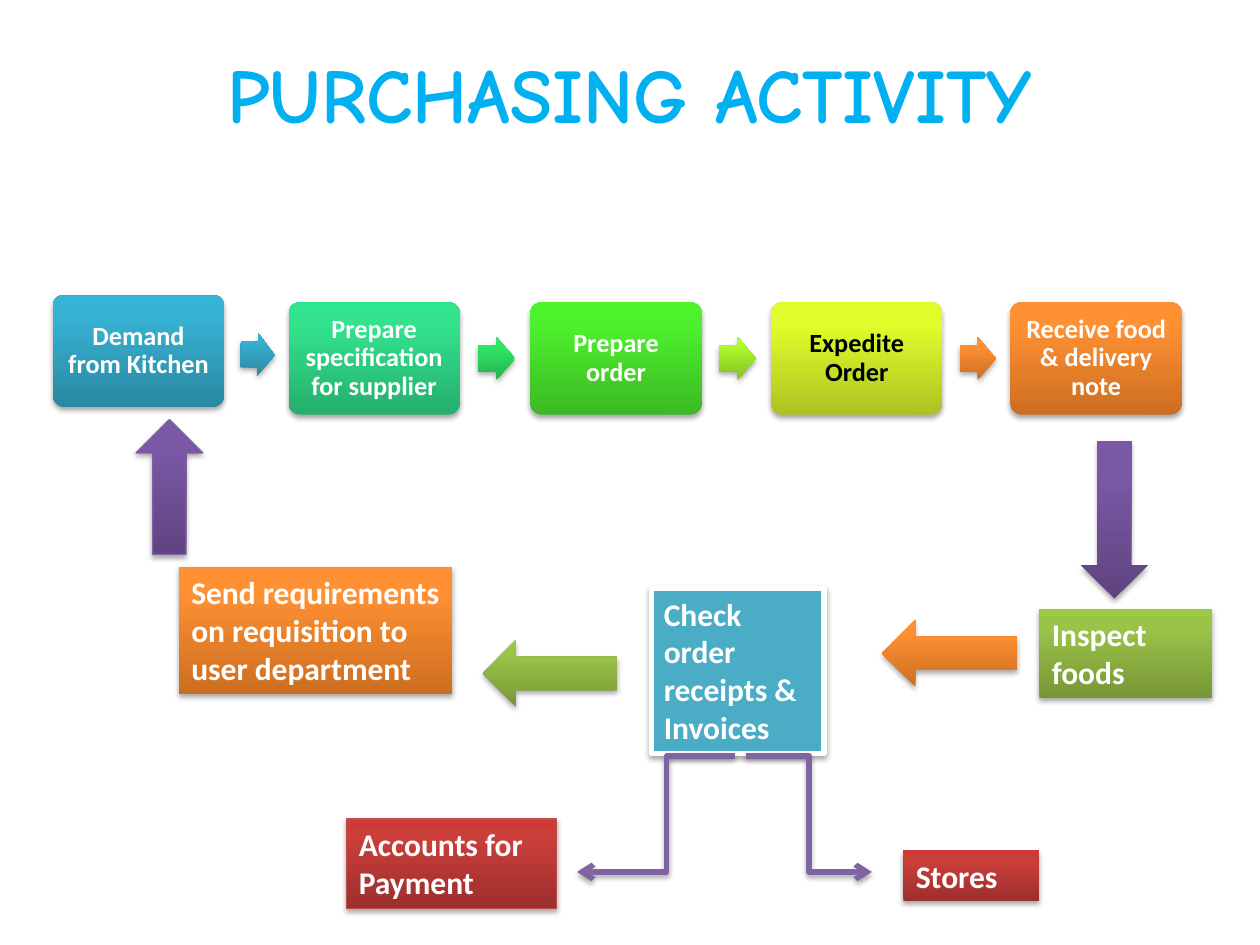
import math

import lxml.etree
import pptx
import pptx.dml.color
import pptx.enum.dml
import pptx.enum.shapes
import pptx.enum.text
import pptx.oxml
import pptx.oxml.ns
import pptx.util

Inches = pptx.util.Inches
Pt = pptx.util.Pt
RGBColor = pptx.dml.color.RGBColor
Shapes = pptx.enum.shapes.MSO_SHAPE
Anchor = pptx.enum.text.MSO_ANCHOR
Align = pptx.enum.text.PP_ALIGN
qn = pptx.oxml.ns.qn

WHITE = RGBColor(0xFF, 0xFF, 0xFF)
BLACK = RGBColor(0x00, 0x00, 0x00)
TITLE_BLUE = RGBColor(0x00, 0xB0, 0xF0)
CHECK_BLUE = RGBColor(0x4B, 0xAC, 0xC6)
CONNECTOR_PURPLE = RGBColor(0x80, 0x64, 0xA2)
ARROW_EDGE = RGBColor(0x7D, 0x60, 0xA0)
ACCOUNTS_EDGE = RGBColor(0xBF, 0x4C, 0x48)

TEAL = (RGBColor(0x2A, 0x88, 0xA2), RGBColor(0x37, 0xB1, 0xD2), RGBColor(0x34, 0xB4, 0xD6))
MINT = (RGBColor(0x26, 0xAE, 0x6D), RGBColor(0x32, 0xE2, 0x8D), RGBColor(0x2E, 0xE6, 0x8E))
EMERALD = (RGBColor(0x25, 0xB2, 0x4E), RGBColor(0x30, 0xE7, 0x65), RGBColor(0x2D, 0xEB, 0x64))
GREEN = (RGBColor(0x3C, 0xB9, 0x23), RGBColor(0x4E, 0xF0, 0x2E), RGBColor(0x4C, 0xF5, 0x2A))
LIME = (RGBColor(0x85, 0xC0, 0x22), RGBColor(0xAD, 0xF9, 0x2C), RGBColor(0xAF, 0xFE, 0x28))
YELLOW = (RGBColor(0xAC, 0xC3, 0x21), RGBColor(0xDF, 0xFD, 0x2B), RGBColor(0xE1, 0xFF, 0x2B))
ORANGE = (RGBColor(0xCC, 0x6E, 0x20), RGBColor(0xFF, 0x90, 0x34), RGBColor(0xFF, 0x91, 0x36))
PURPLE = (RGBColor(0x5F, 0x44, 0x80), RGBColor(0x7B, 0x58, 0xA6), RGBColor(0x7C, 0x57, 0xA8))
OLIVE = (RGBColor(0x77, 0x97, 0x37), RGBColor(0x9B, 0xC3, 0x48), RGBColor(0x9D, 0xC7, 0x46))
RED = (RGBColor(0x9C, 0x2F, 0x2D), RGBColor(0xCB, 0x3E, 0x3A), RGBColor(0xCE, 0x3B, 0x37))

STEPS = [
    ("Demand from Kitchen", 0, 0, TEAL, WHITE),
    ("Prepare specification for supplier", 1.87, 0.06, MINT, WHITE),
    ("Prepare order", 3.79, 0.06, GREEN, WHITE),
    ("Expedite Order", 5.7, 0.06, YELLOW, BLACK),
    ("Receive food & delivery note", 7.6, 0.06, ORANGE, WHITE),
]
STEP_ARROW_COLORS = [TEAL, EMERALD, LIME, ORANGE]


def add_shadow(properties):
    """Give shape properties a soft shadow falling straight down."""
    effects = properties.find(qn("a:effectLst"))
    if effects is None:
        effects = lxml.etree.SubElement(properties, qn("a:effectLst"))
    shadow = lxml.etree.SubElement(
        effects, qn("a:outerShdw"), blurRad="40000", dist="23000", dir="5400000", rotWithShape="0"
    )
    color = lxml.etree.SubElement(shadow, qn("a:srgbClr"), val="000000")
    lxml.etree.SubElement(color, qn("a:alpha"), val="35000")


def set_gradient(shape, colors):
    """Fill a shape with a three-stop gradient running upwards."""
    shape.fill.gradient()
    shape.fill.gradient_angle = 90
    stop_list = shape._element.spPr.find(qn("a:gradFill")).find(qn("a:gsLst"))
    for stop in list(stop_list):
        stop_list.remove(stop)
    for position, color in zip((0, 80000, 100000), colors):
        stop = lxml.etree.SubElement(stop_list, qn("a:gs"), pos=str(position))
        lxml.etree.SubElement(stop, qn("a:srgbClr"), val=str(color))


def add_block(slide, kind, box, fill, edge=None, edge_width=0.75):
    """Add a shadowed shape with a plain or gradient fill."""
    shape = slide.shapes.add_shape(kind, *(Inches(length) for length in box))
    shape.shadow.inherit = False
    add_shadow(shape._element.spPr)
    if isinstance(fill, RGBColor):
        shape.fill.solid()
        shape.fill.fore_color.rgb = fill
    else:
        set_gradient(shape, fill)
    if edge is None:
        shape.line.fill.background()
    else:
        shape.line.color.rgb = edge
        shape.line.width = Pt(edge_width)
    return shape


def write_text(shape, text, size, color, alignment, anchor, font="Calibri"):
    """Write one bold wrapped paragraph in a shape."""
    frame = shape.text_frame
    frame.text = text
    frame.word_wrap = True
    frame.vertical_anchor = anchor
    paragraph = frame.paragraphs[0]
    paragraph.alignment = alignment
    run_font = paragraph.runs[0].font
    run_font.name = font
    run_font.size = Pt(size)
    run_font.bold = True
    run_font.color.rgb = color


def add_label(slide, box, text, fill, edge=None, edge_width=0.75):
    """Add a rectangle with left-aligned white text."""
    shape = add_block(slide, Shapes.RECTANGLE, box, fill, edge, edge_width)
    write_text(shape, text, 18, WHITE, Align.LEFT, Anchor.TOP)
    shape.text_frame.auto_size = pptx.enum.text.MSO_AUTO_SIZE.SHAPE_TO_FIT_TEXT


def add_branch(slide, start, end, bend):
    """Add an elbow connector with an open arrowhead at its end."""
    connector = slide.shapes.add_connector(
        pptx.enum.shapes.MSO_CONNECTOR.ELBOW, *(Inches(length) for length in (*start, *end))
    )
    connector.line.color.rgb = CONNECTOR_PURPLE
    connector.line.width = Pt(3)
    properties = connector._element.spPr
    lxml.etree.SubElement(properties.find(qn("a:ln")), qn("a:tailEnd"), type="arrow")
    adjustments = properties.find(qn("a:prstGeom")).get_or_add_avLst()
    lxml.etree.SubElement(adjustments, qn("a:gd"), name="adj1", fmla=f"val {round(bend * 100000)}")
    add_shadow(properties)


def build_title(slide, left, top, width, height):
    """Place the slide title."""
    title = slide.shapes.add_textbox(Inches(left), Inches(top), Inches(width), Inches(height))
    write_text(title, "PURCHASING ACTIVITY", 44, TITLE_BLUE, Align.CENTER, Anchor.MIDDLE, "Comic Neue")


def build_steps(slide, left, top, width, height):
    """Place the row of steps, with an arrow in the middle of each gap."""
    for text, x, y, fill, color in STEPS:
        shape = add_block(slide, Shapes.ROUNDED_RECTANGLE, (left + x, top + y, width, height), fill)
        shape.adjustments[0] = 0.1
        write_text(shape, text, 15, color, Align.CENTER, Anchor.MIDDLE)
        frame = shape.text_frame
        frame.margin_left = frame.margin_right = frame.margin_top = frame.margin_bottom = Inches(0.06)
        frame.paragraphs[0].line_spacing = 0.9
    for step, following, fill in zip(STEPS, STEPS[1:], STEP_ARROW_COLORS):
        run, rise = following[1] - step[1], following[2] - step[2]
        gap = run - width
        arrow_width, arrow_height = 0.53 * gap, 0.34
        x = left + step[1] + width + (gap - arrow_width) / 2 + 0.01
        y = top + step[2] + (rise + height - arrow_height) / 2
        arrow = add_block(slide, Shapes.RIGHT_ARROW, (x, y, arrow_width, arrow_height), fill)
        arrow.adjustments[0] = 0.6
        arrow.rotation = math.degrees(math.atan2(rise, run))


def build_return(slide, left, top):
    """Place the way back from inspection to the first step."""
    add_block(slide, Shapes.DOWN_ARROW, (left + 7.5, top + 0.17, 0.53, 1.25), PURPLE)
    add_label(slide, (left + 7.17, top + 1.5, 1.37, 0.71), "Inspect foods", OLIVE)
    add_label(slide, (left + 4.09, top + 1.34, 1.37, 1.31), "Check order receipts & Invoices", CHECK_BLUE, WHITE, 3)
    add_label(
        slide, (left + 0.34, top + 1.17, 2.17, 1.01), "Send requirements on requisition to user department", ORANGE
    )
    add_block(slide, Shapes.LEFT_ARROW, (left + 5.92, top + 1.59, 1.07, 0.53), ORANGE)
    add_block(slide, Shapes.LEFT_ARROW, (left + 2.75, top + 1.75, 1.07, 0.53), OLIVE)
    add_block(slide, Shapes.UP_ARROW, (left, top, 0.53, 1.07), PURPLE, ARROW_EDGE)


def build_branches(slide, left, top):
    """Place the two destinations of the checked papers."""
    add_branch(slide, (left + 3.17, top), (left + 4.17, top + 0.92), 0.5)
    add_branch(slide, (left + 3.08, top), (left + 1.83, top + 0.92), 0.43)
    add_label(slide, (left + 4.42, top + 0.75, 1.08, 0.4), "Stores", RED)
    add_label(slide, (left, top + 0.5, 1.67, 0.71), "Accounts for Payment", RED, ACCOUNTS_EDGE)


def main():
    """Build and save the presentation."""
    presentation = pptx.Presentation()
    presentation.slide_width = Inches(10)
    presentation.slide_height = Inches(7.5)
    slide = presentation.slides.add_slide(presentation.slide_layouts[6])
    build_title(slide, 0.5, 0.3, 9, 0.87)
    build_steps(slide, 0.42, 2.34, 1.36, 0.89)
    build_return(slide, 1.08, 3.33)
    build_branches(slide, 2.75, 6)
    presentation.save("out.pptx")


if __name__ == "__main__":
    main()
